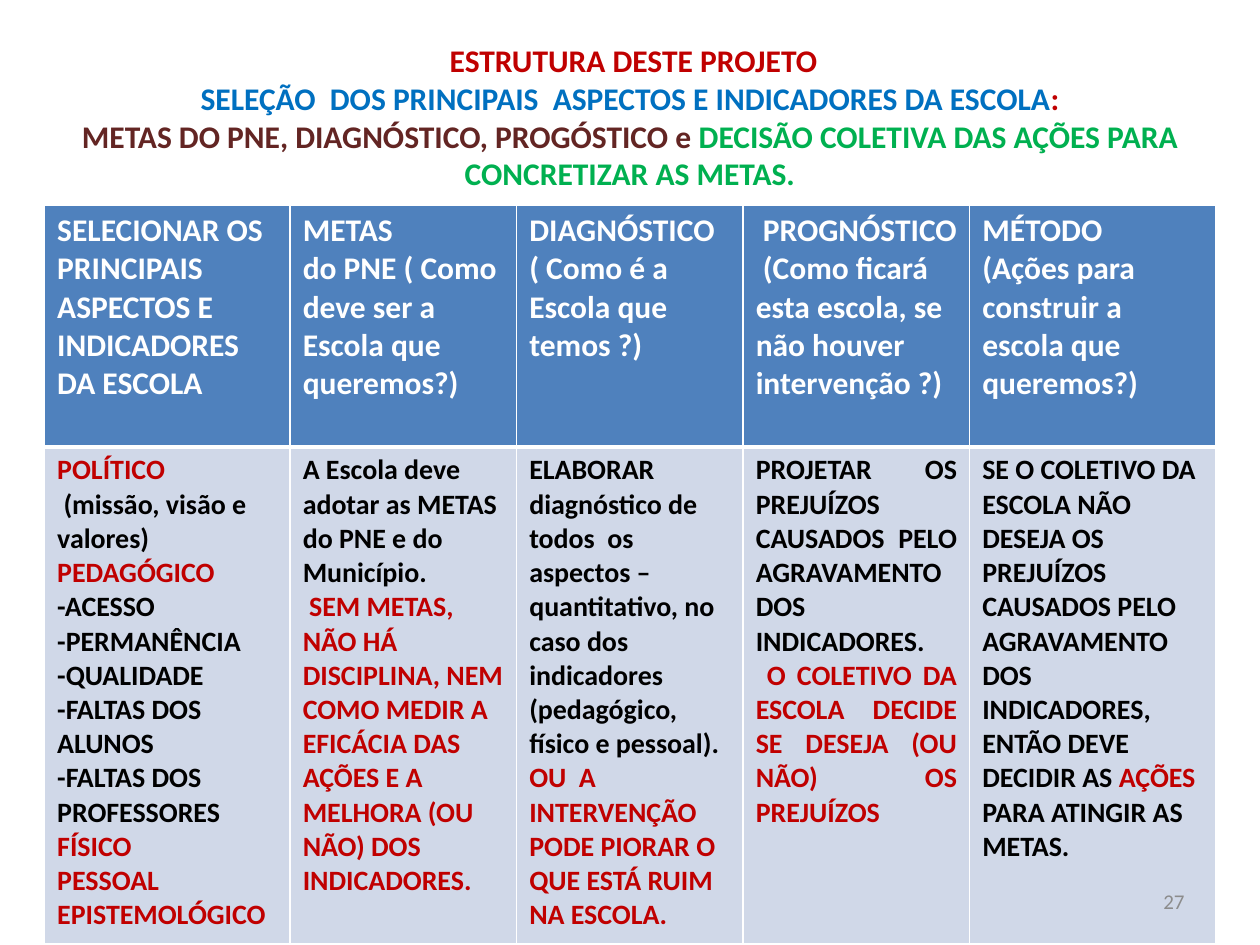
from dataclasses import dataclass

from lxml import etree
from pptx import Presentation
from pptx.dml.color import RGBColor
from pptx.enum import text as t
from pptx.oxml import ns
from pptx.util import Cm, Pt


@dataclass(frozen=True)
class Theme:
    font: str = "Calibri"
    white: str = "FFFFFF"
    black: str = "000000"
    red: str = "C00000"
    blue: str = "0070C0"
    brown: str = "632523"
    green: str = "00B050"
    gray: str = "8C8C8C"
    head: str = "4F81BD"
    body: str = "D0D8E8"
    large: int = 18
    mid: int = 16
    small: int = 12


THEME = Theme()
LEFT, JUST = t.PP_ALIGN.LEFT, t.PP_ALIGN.JUSTIFY

TITLE = [
    [(" ESTRUTURA DESTE PROJETO", THEME.red)],
    [("SELEÇÃO  DOS PRINCIPAIS  ASPECTOS E INDICADORES DA ESCOLA", THEME.blue),
     (":", THEME.red)],
    [("METAS DO PNE, DIAGNÓSTICO, PROGÓSTICO e ", THEME.brown),
     ("DECISÃO COLETIVA DAS AÇÕES PARA CONCRETIZAR AS METAS.", THEME.green)],
]

HEADS = [
    ["SELECIONAR OS PRINCIPAIS  ASPECTOS E INDICADORES  DA ESCOLA"],
    ["METAS", "do PNE ( Como deve ser a Escola que queremos?)"],
    ["DIAGNÓSTICO", "( Como é a Escola que temos ?)"],
    [" PROGNÓSTICO  (Como ficará esta escola, se não houver intervenção ?)"],
    ["MÉTODO", "(Ações para construir a escola que queremos?)"],
]

ITEMS = ["-ACESSO", "-PERMANÊNCIA", "-QUALIDADE", "-FALTAS DOS ALUNOS",
         "-FALTAS DOS PROFESSORES"]
AREAS = ["FÍSICO", "PESSOAL", "EPISTEMOLÓGICO"]

BODIES = [
    [[("POLÍTICO", THEME.red)], [(" (missão, visão e valores)", THEME.black)],
     [("PEDAGÓGICO", THEME.red)],
     *[[(item, THEME.black)] for item in ITEMS],
     *[[(area, THEME.red)] for area in AREAS]],
    [[("A Escola deve adotar as METAS do PNE e do Município.", THEME.black)],
     [(" SEM METAS, NÃO HÁ DISCIPLINA, NEM COMO MEDIR A EFICÁCIA DAS AÇÕES "
       "E A MELHORA (OU NÃO) DOS INDICADORES.", THEME.red)]],
    [[("ELABORAR diagnóstico de todos  os aspectos – quantitativo, no caso dos "
       "indicadores (pedagógico, físico e pessoal).", THEME.black)],
     [("OU  A INTERVENÇÃO PODE PIORAR O QUE ESTÁ RUIM NA ESCOLA.", THEME.red)]],
    [[("PROJETAR OS PREJUÍZOS CAUSADOS PELO AGRAVAMENTO DOS INDICADORES.",
       THEME.black)],
     [(" O COLETIVO DA ESCOLA DECIDE SE DESEJA (OU NÃO) OS PREJUÍZOS",
       THEME.red)]],
    [[("SE O COLETIVO DA ESCOLA NÃO DESEJA OS PREJUÍZOS CAUSADOS PELO "
       "AGRAVAMENTO DOS INDICADORES, ENTÃO DEVE DECIDIR AS ", THEME.black),
      ("AÇÕES", THEME.red), (" PARA ATINGIR AS METAS.", THEME.black)]],
]
ALIGNS = [LEFT, LEFT, LEFT, JUST, LEFT]


def write(para, runs, size, bold=True):
    for words, color in runs:
        run = para.add_run()
        run.text = words
        run.font.name = THEME.font
        run.font.size = Pt(size)
        run.font.bold = bold
        run.font.color.rgb = RGBColor.from_string(color)


def add_box(slide, box, align):
    frame = slide.shapes.add_textbox(*map(Cm, box)).text_frame
    frame.word_wrap = True
    frame.vertical_anchor = t.MSO_ANCHOR.MIDDLE
    para = frame.paragraphs[0]
    para.alignment = align
    return para


def add_title(slide, box):
    para = add_box(slide, box, t.PP_ALIGN.CENTER)
    for i, line in enumerate(TITLE):
        if i:
            para.add_line_break()
        write(para, line, THEME.large)


def add_number(slide, box):
    para = add_box(slide, box, t.PP_ALIGN.RIGHT)
    write(para, [("27", THEME.gray)], THEME.small, bold=False)


def add_edges(cell, widths):
    props = cell._tc.get_or_add_tcPr()
    for side, width in widths.items():
        line = etree.SubElement(props, ns.qn(f"a:ln{side}"), w=str(Pt(width)))
        fill = etree.SubElement(line, ns.qn("a:solidFill"))
        etree.SubElement(fill, ns.qn("a:srgbClr"), val=THEME.white)


def fill_cell(cell, lines, size, color, align, rule):
    add_edges(cell, {"L": 1, "R": 1, **rule})
    cell.fill.solid()
    cell.fill.fore_color.rgb = RGBColor.from_string(color)
    frame = cell.text_frame
    for i, runs in enumerate(lines):
        para = frame.add_paragraph() if i else frame.paragraphs[0]
        para.alignment = align
        write(para, runs, size)


def add_grid(slide, box):
    left, top, width, height = box
    wide, high = 4.95, 4.88
    slim = (width - 2 * wide) / 3
    table = slide.shapes.add_table(2, 5, *map(Cm, box)).table
    for col, size in zip(table.columns, [wide, slim, slim, slim, wide]):
        col.width = Cm(size)
    for row, size in zip(table.rows, [high, height - high]):
        row.height = Cm(size)
    for i, (head, body, align) in enumerate(zip(HEADS, BODIES, ALIGNS)):
        lines = [[(words, THEME.white)] for words in head]
        fill_cell(table.cell(0, i), lines, THEME.large, THEME.head, LEFT,
                  {"T": 1, "B": 3})
        fill_cell(table.cell(1, i), body, THEME.mid, THEME.body, align,
                  {"T": 3, "B": 1})


def main():
    deck = Presentation()
    deck.slide_width, deck.slide_height = Cm(25.4), Cm(19.05)
    slide = deck.slides.add_slide(deck.slide_layouts[6])
    add_title(slide, (1.27, 0.76, 22.86, 3.18))
    add_grid(slide, (0.9, 4.13, 23.6, 14.89))
    add_number(slide, (18.2, 17.66, 5.93, 1.01))
    deck.save("out.pptx")


if __name__ == "__main__":
    main()
